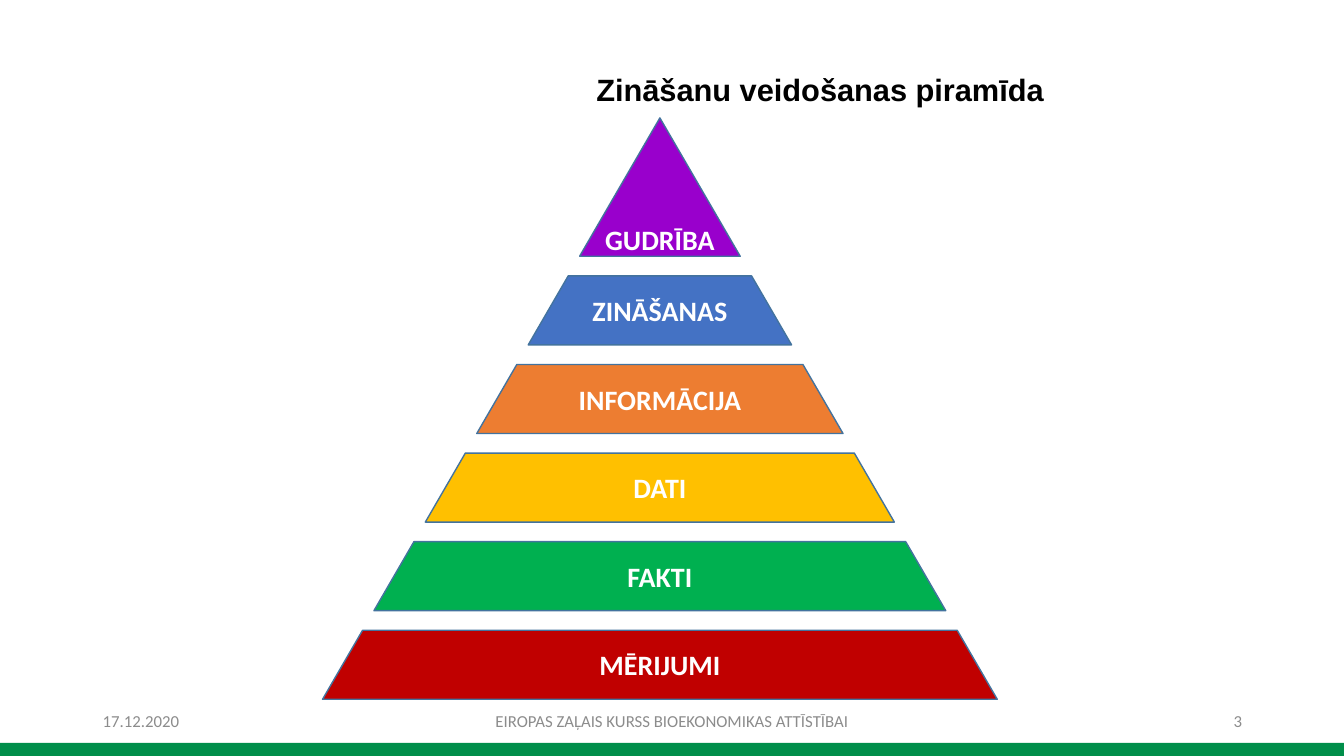
from dataclasses import dataclass

from pptx import Presentation
from pptx.dml.color import RGBColor
from pptx.enum.shapes import MSO_SHAPE
from pptx.enum.text import MSO_ANCHOR, MSO_AUTO_SIZE, PP_ALIGN
from pptx.util import Inches, Pt


@dataclass(frozen=True)
class Theme:
    title_font: str = "Arial"
    body_font: str = "Calibri"
    title_size: int = 22
    tier_size: int = 20
    footer_size: int = 12
    black: str = "000000"
    white: str = "FFFFFF"
    gray: str = "8C8C8C"
    outline: str = "43739E"
    bar: str = "008E4A"


class SlideBuilder:
    """Places elements by percent of the slide's width and height."""

    def __init__(self, deck, theme):
        self.deck = deck
        self.theme = theme
        self.page = deck.slides.add_slide(deck.slide_layouts[5])

    def across(self, percent):
        return round(self.deck.slide_width * percent / 100)

    def down(self, percent):
        return round(self.deck.slide_height * percent / 100)

    def area(self, left, top, width, height):
        return self.across(left), self.down(top), self.across(width), self.down(height)

    def add_text(self, box, text, font, size, color, align, bold=False,
                 anchor=MSO_ANCHOR.MIDDLE):
        frame = box.text_frame
        frame.word_wrap = True
        frame.auto_size = MSO_AUTO_SIZE.NONE
        frame.vertical_anchor = anchor
        para = frame.paragraphs[0]
        para.alignment = align
        span = para.add_run()
        span.text = text
        span.font.name = font
        span.font.size = Pt(size)
        span.font.bold = bold
        span.font.color.rgb = RGBColor.from_string(color)
        return para

    def title(self, text, *place):
        box = self.page.shapes.title
        box.left, box.top, box.width, box.height = self.area(*place)
        para = self.add_text(box, text, self.theme.title_font, self.theme.title_size,
                             self.theme.black, PP_ALIGN.CENTER, bold=True)
        para.line_spacing = 0.9

    def footer(self, text, left, width, align):
        box = self.page.shapes.add_textbox(*self.area(left, 92.67, width, 5.33))
        self.add_text(box, text, self.theme.body_font, self.theme.footer_size,
                      self.theme.gray, align)

    def bar(self, *place):
        box = self.page.shapes.add_shape(MSO_SHAPE.RECTANGLE, *self.area(*place))
        box.shadow.inherit = False
        box.fill.solid()
        box.fill.fore_color.rgb = RGBColor.from_string(self.theme.bar)
        box.line.fill.background()

    def tier(self, group, text, color, corners, anchor):
        points = [(self.across(x), self.down(y)) for x, y in corners]
        outline = group.shapes.build_freeform(*points[0])
        outline.add_line_segments(points[1:], close=True)
        box = outline.convert_to_shape()
        box.shadow.inherit = False
        box.fill.solid()
        box.fill.fore_color.rgb = RGBColor.from_string(color)
        box.line.color.rgb = RGBColor.from_string(self.theme.outline)
        box.line.width = Pt(1)
        box.text_frame.margin_top = box.text_frame.margin_bottom = 0
        self.add_text(box, text, self.theme.body_font, self.theme.tier_size,
                      self.theme.white, PP_ALIGN.CENTER, bold=True, anchor=anchor)

    def pyramid(self, tiers, center, apex, first_base, pitch, height, half_base):
        """Cuts one large triangle into a tip and evenly spaced bands."""
        group = self.page.shapes.add_group_shape()
        slope = half_base / (first_base + pitch * (len(tiers) - 1) - apex)
        for index, (text, color) in enumerate(tiers):
            base = first_base + pitch * index
            low = slope * (base - apex)
            if index == 0:
                upper = [(center, apex)]
                anchor = MSO_ANCHOR.BOTTOM
            else:
                top = base - height
                high = slope * (top - apex)
                upper = [(center - high, top), (center + high, top)]
                anchor = MSO_ANCHOR.MIDDLE
            lower = [(center + low, base), (center - low, base)]
            self.tier(group, text, color, upper + lower, anchor)


TIERS = [
    ("GUDRĪBA", "9900CC"),
    ("ZINĀŠANAS", "4472C4"),
    ("INFORMĀCIJA", "ED7D31"),
    ("DATI", "FFC000"),
    ("FAKTI", "00B050"),
    ("MĒRIJUMI", "C00000"),
]


def main():
    deck = Presentation()
    deck.slide_width, deck.slide_height = Inches(13.33), Inches(7.5)
    slide = SlideBuilder(deck, Theme())

    # Bottom bar and title
    slide.bar(0, 98.27, 100, 1.73)
    slide.title("Zināšanu veidošanas piramīda", 25.36, 8.8, 71.34, 6.67)

    # Footer line
    slide.footer("17.12.2020", 6.9, 22.5, PP_ALIGN.LEFT)
    slide.footer("EIROPAS ZAĻAIS KURSS BIOEKONOMIKAS ATTĪSTĪBAI",
                 33.12, 33.76, PP_ALIGN.CENTER)
    slide.footer("3", 70.67, 22.5, PP_ALIGN.RIGHT)

    # Knowledge pyramid
    slide.pyramid(TIERS, center=49.1, apex=15.6, first_base=33.9,
                  pitch=11.72, height=9.13, half_base=25.1)

    deck.save("out.pptx")


if __name__ == "__main__":
    main()
